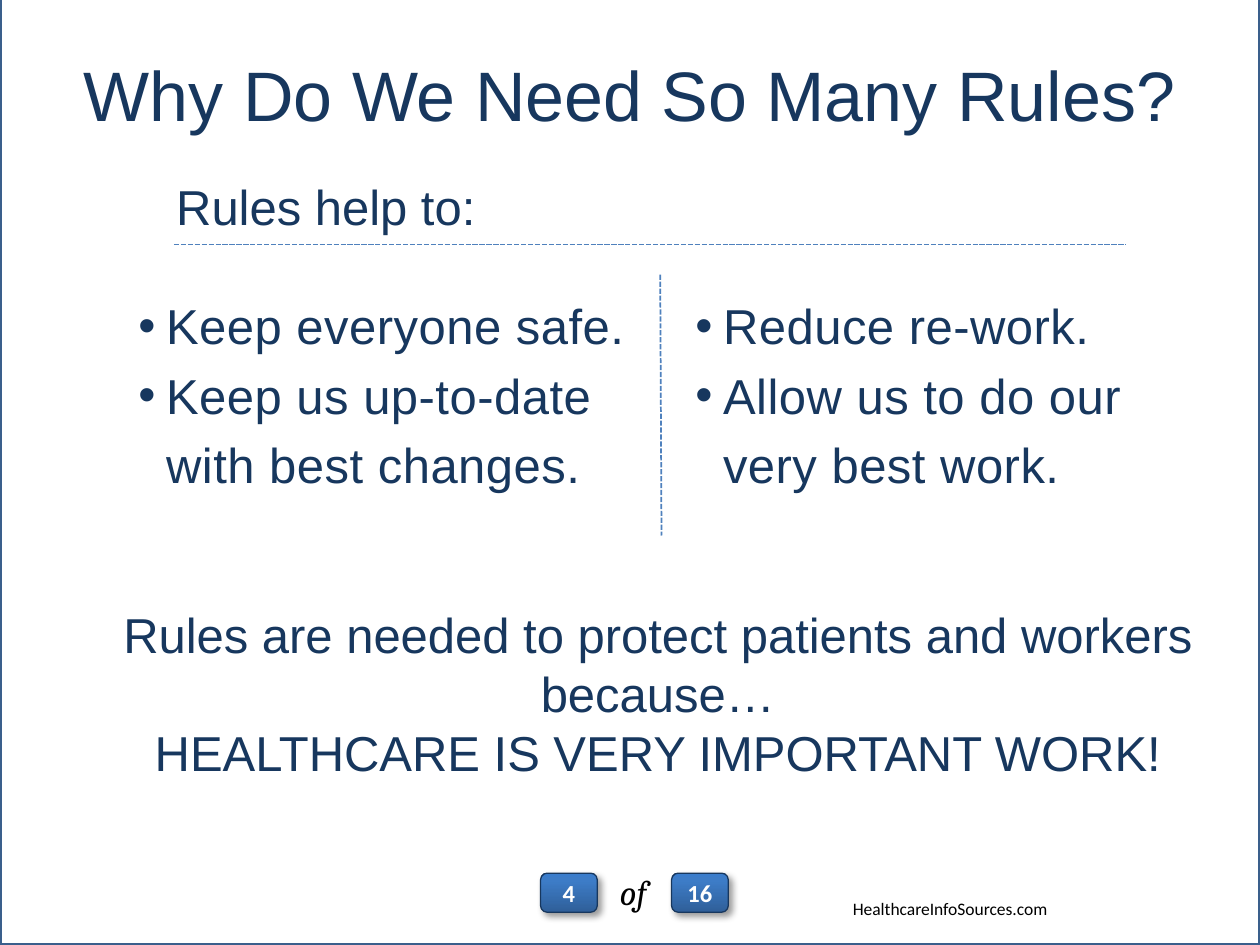
from lxml.etree import SubElement
from pptx import Presentation
from pptx.dml.color import RGBColor
from pptx.enum.dml import MSO_LINE
from pptx.enum.shapes import MSO_CONNECTOR, MSO_SHAPE
from pptx.enum.text import MSO_ANCHOR, PP_ALIGN
from pptx.oxml import parse_xml
from pptx.oxml.ns import nsdecls, qn
from pptx.util import Inches, Pt

NAVY, BLUE, BLACK, WHITE = "17375E", "4F81BD", "000000", "FFFFFF"
HANG = 0.22

# Content: columns hold (has bullet, text)
TITLE = "Why Do We Need So Many Rules?"
LEAD = "Rules help to:"
COLUMNS = [
    (1, [(True, "Keep everyone safe."), (True, "Keep us up-to-date"),
         (False, "with best changes.")]),
    (5.42, [(True, "Reduce re-work."), (True, "Allow us to do our"),
            (False, "very best work.")]),
]
CLOSING = ["Rules are needed to protect patients and workers", "because…",
           "HEALTHCARE IS VERY IMPORTANT WORK!"]
DIVIDERS = [(1.38, 1.94, 8.94, 1.94), (5.24, 2.18, 5.25, 4.25)]
COUNTERS = [(4.29, "4"), (5.33, "16")]
SITE = "HealthcareInfoSources.com"

GRADIENT = f"""<a:gradFill {nsdecls('a')} rotWithShape="1"><a:gsLst>
<a:gs pos="0"><a:srgbClr val="2F5F99"/></a:gs>
<a:gs pos="80000"><a:srgbClr val="3D7CC7"/></a:gs>
<a:gs pos="100000"><a:srgbClr val="3A7CCB"/></a:gs>
</a:gsLst><a:lin ang="16200000" scaled="0"/></a:gradFill>"""
SHADOW = f"""<a:effectLst {nsdecls('a')}>
<a:outerShdw blurRad="50800" dist="38100" dir="2700000" algn="tl" rotWithShape="0">
<a:srgbClr val="000000"><a:alpha val="40000"/></a:srgbClr></a:outerShdw></a:effectLst>"""


def color(hex_value):
    return RGBColor.from_string(hex_value)


def write(tf, lines, size, ink=NAVY, font="Arial", align=PP_ALIGN.LEFT,
          gap=0, bold=False, italic=False):
    tf.text = "\n".join(lines)
    for i, p in enumerate(tf.paragraphs):
        p.alignment = align
        if i:
            p.space_before = Pt(gap)
        for r in p.runs:
            f = r.font
            f.size, f.name, f.bold, f.italic = Pt(size), font, bold, italic
            f.color.rgb = color(ink)


def add_text(s, box, lines, size, wrap=True, **style):
    tf = s.shapes.add_textbox(*map(Inches, box)).text_frame
    tf.word_wrap = wrap
    write(tf, lines, size, **style)
    return tf


def add_column(s, left, items):
    tf = add_text(s, (left, 2.3, 4.1, 2.13), [t for _, t in items], 28, gap=6)
    for p, (bulleted, _) in zip(tf.paragraphs, items):
        pPr = p._p.get_or_add_pPr()
        pPr.set("marL", str(Inches(HANG)))
        pPr.set("indent", str(-Inches(HANG) if bulleted else 0))
        if bulleted:
            SubElement(pPr, qn("a:buFont"), typeface="Arial")
            SubElement(pPr, qn("a:buChar"), char="•")
        p.runs[0].font._element.set("spc", "30")


def add_divider(s, ends):
    line = s.shapes.add_connector(MSO_CONNECTOR.STRAIGHT, *map(Inches, ends))
    line.line.color.rgb = color(BLUE)
    line.line.width = Pt(1)
    line.line.dash_style = MSO_LINE.SQUARE_DOT
    SubElement(line._element.spPr, qn("a:effectLst"))


def add_counter(s, left, number):
    sp = s.shapes.add_shape(MSO_SHAPE.ROUNDED_RECTANGLE, Inches(left),
                            Inches(6.93), Inches(0.45), Inches(0.31))
    sp.line.color.rgb = color(NAVY)
    sp.line.width = Pt(0.75)
    spPr = sp._element.spPr
    spPr.find(qn("a:ln")).addprevious(parse_xml(GRADIENT))
    spPr.append(parse_xml(SHADOW))
    tf = sp.text_frame
    tf.margin_left = tf.margin_right = tf.margin_top = tf.margin_bottom = 0
    tf.vertical_anchor = MSO_ANCHOR.MIDDLE
    write(tf, [number], 14, WHITE, "Calibri", PP_ALIGN.CENTER, bold=True)


prs = Presentation()
prs.slide_width, prs.slide_height = Inches(10), Inches(7.5)
s = prs.slides.add_slide(prs.slide_layouts[6])

# Frame
frame = s.shapes.add_shape(MSO_SHAPE.RECTANGLE, 0, Inches(-0.03),
                           Inches(10), Inches(7.53))
frame.shadow.inherit = False
frame.fill.solid()
frame.fill.fore_color.rgb = color(WHITE)
frame.line.color.rgb = color("3A5F8C")
frame.line.width = Pt(2)

# Heading and lead-in
add_text(s, (0.42, 0.36, 9.15, 0.95), [TITLE], 40, align=PP_ALIGN.CENTER)
add_text(s, (1.3, 1.35, 8.35, 0.57), [LEAD], 28)

# Two columns with dividers
for left, items in COLUMNS:
    add_column(s, left, items)
for ends in DIVIDERS:
    add_divider(s, ends)

# Closing statement
add_text(s, (0.83, 4.75, 8.78, 1.82), CLOSING, 28, wrap=False,
         align=PP_ALIGN.CENTER)

# Page counter and site
add_text(s, (4.82, 6.86, 0.44, 0.44), ["of"], 20, wrap=False, ink=BLACK,
         font="Cambria", italic=True)
for left, number in COUNTERS:
    add_counter(s, left, number)
add_text(s, (6.67, 7.08, 1.75, 0.27), [SITE], 10, ink=BLACK, font="Calibri")

prs.save("out.pptx")
